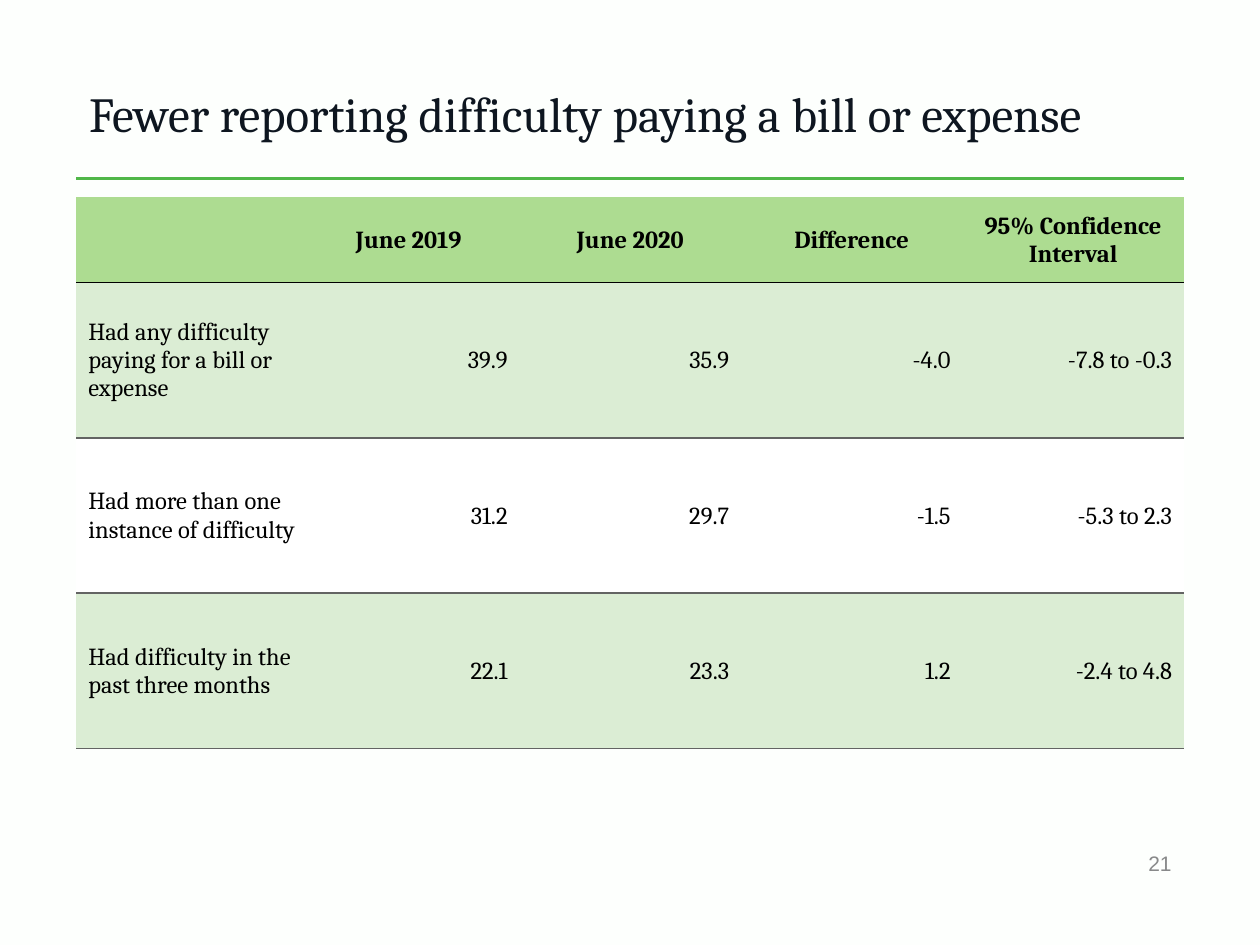
from dataclasses import dataclass
from typing import Optional

from lxml import etree
from pptx import Presentation
from pptx.dml.color import RGBColor
from pptx.enum import shapes, text
from pptx.oxml import ns
from pptx.util import Pt

COLORS = {
    "background": "FDFFFD", "rule": "50B748", "title": "0E1620",
    "page": "88898A", "black": "000000", "border": "636463",
    "header": "ADDC91", "band": "DBEDD4", "white": "FFFFFF",
}
LEFT, WIDTH = 43.7, 632.9
HEADER_HEIGHT, ROW_HEIGHT = 48.9, 88.75
HEADINGS = ["", "June 2019", "June 2020", "Difference", "95% Confidence Interval"]


@dataclass
class Measure:
    label: str
    values: list[str]
    fill: str


@dataclass
class CellStyle:
    fill: str
    top: Optional[str]
    bottom: str
    align: text.PP_ALIGN
    bold: bool = False
    left_inset: float = 0.6
    right_inset: float = 0.6


MEASURES = [
    Measure("Had any difficulty paying for a bill or expense",
            ["39.9", "35.9", "-4.0", "-7.8 to -0.3"], "band"),
    Measure("Had more than one instance of difficulty",
            ["31.2", "29.7", "-1.5", "-5.3 to 2.3"], "white"),
    Measure("Had difficulty in the past three months",
            ["22.1", "23.3", "1.2", "-2.4 to 4.8"], "band"),
]


def color(name: str) -> RGBColor:
    return RGBColor.from_string(COLORS[name])


def write(frame, words: str, size: float, font: str, ink: str,
          align: text.PP_ALIGN, bold: bool = False) -> None:
    frame.text = words
    frame.word_wrap = True
    frame.vertical_anchor = text.MSO_ANCHOR.MIDDLE
    paragraph = frame.paragraphs[0]
    paragraph.alignment = align
    for run in paragraph.runs:
        run.font.size = Pt(size)
        run.font.name = font
        run.font.bold = bold
        run.font.color.rgb = color(ink)


def set_borders(cell, top: Optional[str], bottom: str) -> None:
    """Draw horizontal edges only; a missing colour means no line."""
    properties = cell._tc.get_or_add_tcPr()
    edges = {"lnL": None, "lnR": None, "lnT": top, "lnB": bottom}
    for position, (tag, ink) in enumerate(edges.items()):
        line = etree.Element(ns.qn(f"a:{tag}"), w=str(Pt(1)))
        if ink:
            fill = etree.SubElement(line, ns.qn("a:solidFill"))
            etree.SubElement(fill, ns.qn("a:srgbClr"), val=COLORS[ink])
        else:
            etree.SubElement(line, ns.qn("a:noFill"))
        properties.insert(position, line)


def fill_cell(cell, words: str, style: CellStyle) -> None:
    write(cell.text_frame, words, 14, "Cambria", "black", style.align, style.bold)
    cell.vertical_anchor = text.MSO_ANCHOR.MIDDLE
    cell.margin_left, cell.margin_right = Pt(style.left_inset), Pt(style.right_inset)
    cell.margin_top, cell.margin_bottom = Pt(0.6), Pt(0)
    cell.fill.solid()
    cell.fill.fore_color.rgb = color(style.fill)
    set_borders(cell, style.top, style.bottom)


def add_title(slide) -> None:
    title = slide.shapes.title
    title.left, title.top = Pt(LEFT), Pt(35.3)
    title.width, title.height = Pt(WIDTH), Pt(58.3)
    write(title.text_frame, "Fewer reporting difficulty paying a bill or expense",
          28, "Cambria", "title", text.PP_ALIGN.LEFT)


def add_rule(slide) -> None:
    rule = slide.shapes.add_connector(
        shapes.MSO_CONNECTOR.STRAIGHT, Pt(LEFT), Pt(102), Pt(LEFT + WIDTH), Pt(102))
    rule.line.color.rgb = color("rule")
    rule.line.width = Pt(2)
    etree.SubElement(rule._element.spPr, ns.qn("a:effectLst"))


def add_measures(slide) -> None:
    table = slide.shapes.add_table(
        len(MEASURES) + 1, len(HEADINGS), Pt(LEFT), Pt(112.6), Pt(WIDTH),
        Pt(HEADER_HEIGHT + ROW_HEIGHT * len(MEASURES))).table
    table.first_row = table.horz_banding = False
    for column in table.columns:
        column.width = Pt(WIDTH / len(HEADINGS))
    for index, row in enumerate(table.rows):
        row.height = Pt(ROW_HEIGHT if index else HEADER_HEIGHT)

    heading_style = CellStyle("header", None, "black", text.PP_ALIGN.CENTER, bold=True)
    for column, heading in enumerate(HEADINGS):
        fill_cell(table.cell(0, column), heading, heading_style)
    for row, measure in enumerate(MEASURES, start=1):
        top = "black" if row == 1 else "border"
        label_style = CellStyle(measure.fill, top, "border",
                                text.PP_ALIGN.LEFT, left_inset=6.8)
        value_style = CellStyle(measure.fill, top, "border",
                                text.PP_ALIGN.RIGHT, right_inset=6.8)
        fill_cell(table.cell(row, 0), measure.label, label_style)
        for column, value in enumerate(measure.values, start=1):
            fill_cell(table.cell(row, column), value, value_style)


def add_page_number(slide) -> None:
    page = slide.shapes.add_textbox(Pt(448.6), Pt(479), Pt(228), Pt(28.8))
    write(page.text_frame, "21", 12, "Arial", "page", text.PP_ALIGN.RIGHT)


def main() -> None:
    deck = Presentation()
    deck.slide_width, deck.slide_height = Pt(720), Pt(540)
    slide = deck.slides.add_slide(deck.slide_layouts[5])
    slide.background.fill.solid()
    slide.background.fill.fore_color.rgb = color("background")
    add_rule(slide)
    add_title(slide)
    add_page_number(slide)
    add_measures(slide)
    deck.save("out.pptx")


if __name__ == "__main__":
    main()
